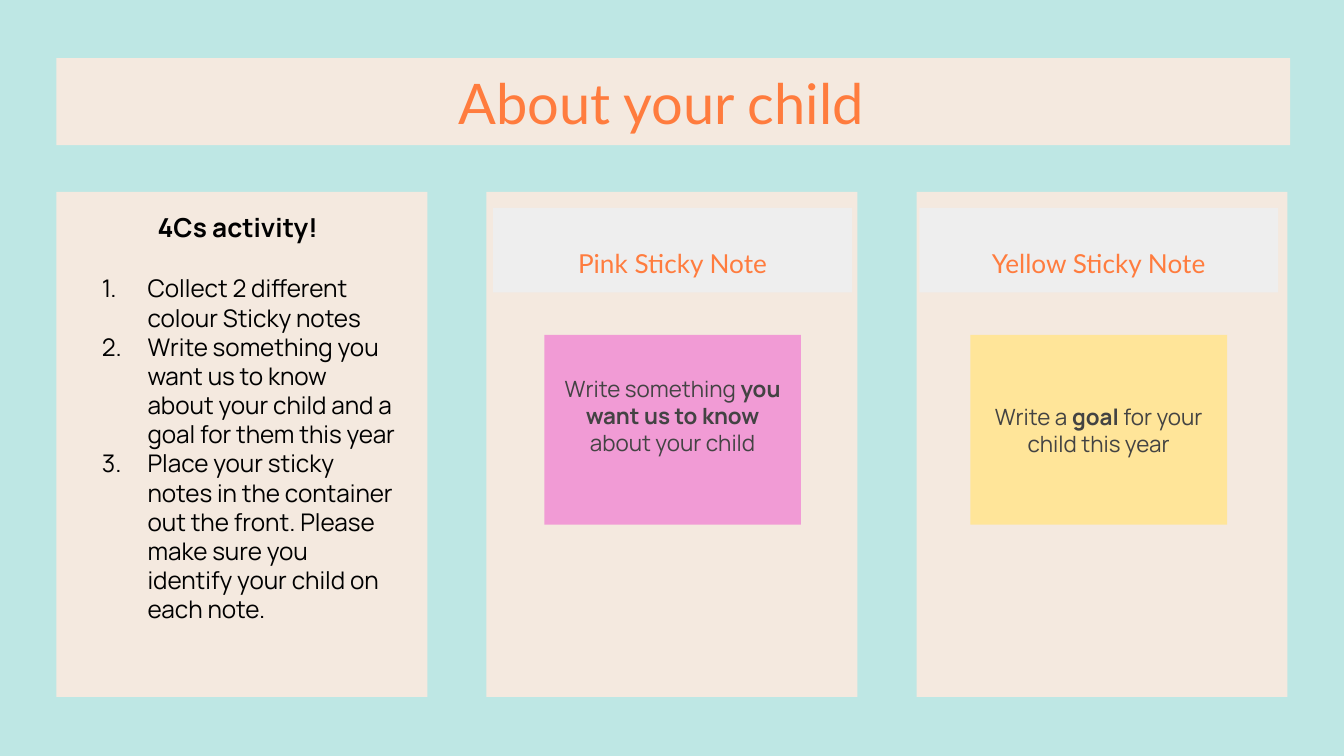
"""Builds the "About your child" slide with its instructions and two sticky notes."""
import lxml.etree
import pptx
import pptx.dml.color
import pptx.enum.shapes
import pptx.enum.text
import pptx.oxml.ns
import pptx.util

theme = {
    "sky": "BEE7E4", "sand": "F4E9DF", "grey": "EEEEEE", "pink": "F19BD5",
    "yellow": "FFE599", "orange": "FF7C3E", "ink": "434343", "black": "000000",
    "title": {"name": "Lato", "size": pptx.util.Pt(30)},
    "label": {"name": "Lato", "size": pptx.util.Pt(14)},
    "note": {"name": "Manrope", "size": pptx.util.Pt(12)},
    "heading": {"name": "Manrope", "size": pptx.util.Pt(14)},
    "step": {"name": "Manrope", "size": pptx.util.Pt(13)},
}
anchors = pptx.enum.text.MSO_ANCHOR
center = pptx.enum.text.PP_ALIGN.CENTER
rgb = pptx.dml.color.RGBColor.from_string

deck = pptx.Presentation()
deck.slide_width = pptx.util.Inches(10)
deck.slide_height = deck.slide_width * 9 // 16
slide = deck.slides.add_slide(deck.slide_layouts[6])
slide.background.fill.solid()
slide.background.fill.fore_color.rgb = rgb(theme["sky"])
column, row = deck.slide_width / 100, deck.slide_height / 100


def add_block(left, top, width, height, color=None, anchor=anchors.TOP):
    box = [round(left * column), round(top * row), round(width * column), round(height * row)]
    if color:
        block = slide.shapes.add_shape(pptx.enum.shapes.MSO_SHAPE.RECTANGLE, *box)
        block.shadow.inherit = False
        block.fill.solid()
        block.fill.fore_color.rgb = rgb(theme[color])
        block.line.fill.background()
    else:
        block = slide.shapes.add_textbox(*box)
    inset = pptx.util.Inches(0.1)
    settings = {"word_wrap": True, "vertical_anchor": anchor, "margin_left": inset,
                "margin_right": inset, "margin_top": inset, "margin_bottom": inset}
    for key, value in settings.items():
        setattr(block.text_frame, key, value)
    return block


def write(paragraph, runs, style, color, alignment=center):
    paragraph.alignment = alignment
    for words, bold in runs:
        run = paragraph.add_run()
        run.text = words
        for key, value in {**theme[style], "bold": bold}.items():
            setattr(run.font, key, value)
        run.font.color.rgb = rgb(theme[color])


margin, panel_pitch, panel_width = 4.2, 32, 27.6
add_block(margin, 7.7, 91.8, 11.5, "sand")
for index in range(3):
    add_block(margin + index * panel_pitch, 25.4, panel_width, 66.8, "sand")

title = add_block(5.8, 7.7, 86.8, 11.5, anchor=anchors.MIDDLE)
write(title.text_frame.paragraphs[0], [("About your child", False)], "title", "orange")

notes = [
    (36.7, "Pink Sticky Note", "pink", anchors.TOP, 0.3,
     [("Write something ", False), ("you want us to know", True), (" about your child", False)]),
    (68.4, "Yellow Sticky Note", "yellow", anchors.MIDDLE, 0.1,
     [("Write a ", False), ("goal", True), (" for your child this year", False)]),
]
for left, label, color, anchor, top_inset, prompt in notes:
    note = add_block(left + 3.8, 44.3, 19.1, 25.1, color, anchor)
    note.text_frame.margin_top = pptx.util.Inches(top_inset)
    write(note.text_frame.paragraphs[0], prompt, "note", "ink")
    header = add_block(left, 27.5, 26.7, 11.2, "grey", anchors.BOTTOM)
    write(header.text_frame.paragraphs[0], [(label, False)], "label", "orange")

activity = add_block(5, 26.2, 25.4, 66.4).text_frame
heading = activity.paragraphs[0]
heading.space_after = pptx.util.Pt(16.5)
write(heading, [("4Cs activity!", True)], "heading", "black")
steps = [
    "Collect 2 different colour Sticky notes",
    "Write something you want us to know about your child and a goal for them this year",
    "Place your sticky notes in the container out the front. Please make sure you identify your child on each note.",
]
for step in steps:
    item = activity.add_paragraph()
    layout = item._p.get_or_add_pPr()
    layout.set("marL", str(pptx.util.Inches(0.5)))
    layout.set("indent", str(-pptx.util.Inches(0.34)))
    number_color = lxml.etree.SubElement(layout, pptx.oxml.ns.qn("a:buClr"))
    lxml.etree.SubElement(number_color, pptx.oxml.ns.qn("a:srgbClr"), val=theme["black"])
    lxml.etree.SubElement(layout, pptx.oxml.ns.qn("a:buFont"), typeface=theme["step"]["name"])
    lxml.etree.SubElement(layout, pptx.oxml.ns.qn("a:buAutoNum"), type="arabicPeriod")
    write(item, [(step, False)], "step", "black", pptx.enum.text.PP_ALIGN.LEFT)

deck.save("out.pptx")
